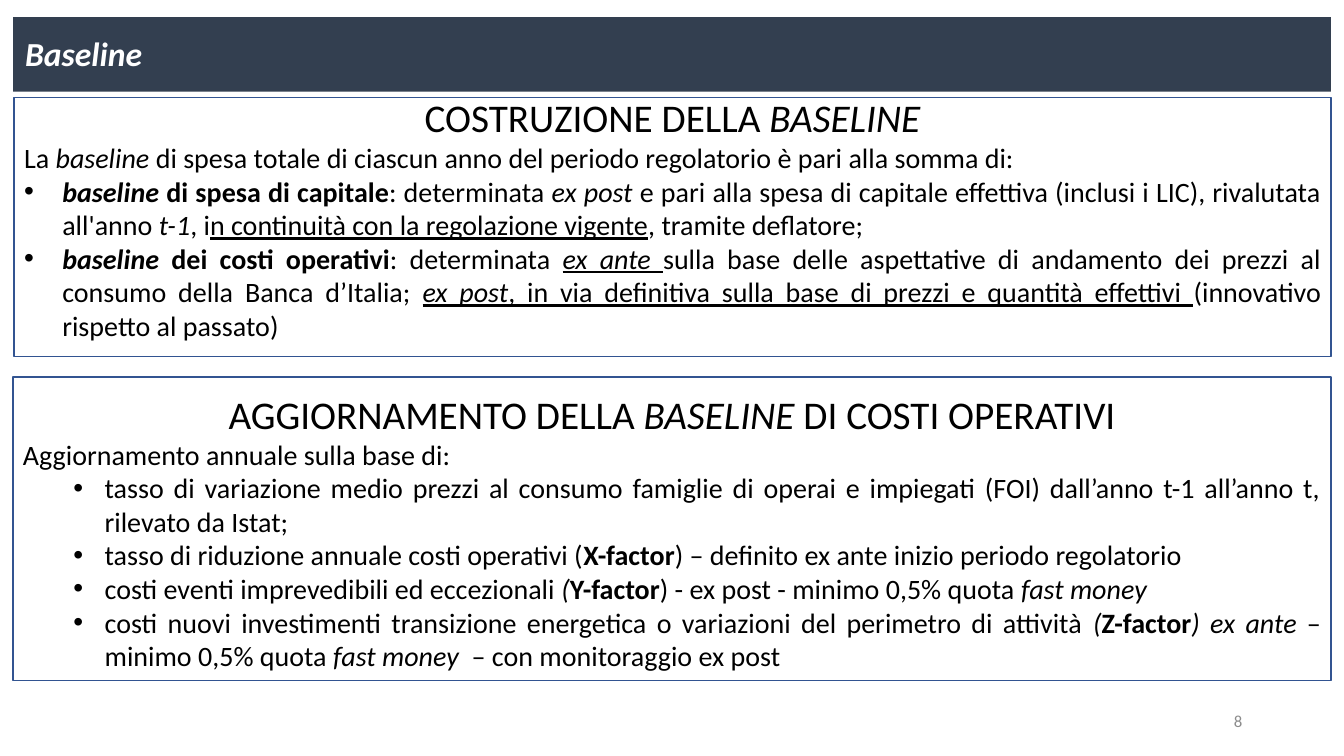
"""Build the slide on how the spending baseline is set and updated."""
from lxml.etree import SubElement
from pptx import Presentation
from pptx.dml.color import RGBColor
from pptx.enum.shapes import MSO_SHAPE
from pptx.enum.text import MSO_ANCHOR, PP_ALIGN
from pptx.oxml.ns import qn
from pptx.util import Inches, Pt


def color(code):
    return RGBColor.from_string(code)


def run(text, **form):
    return text, form


def indent(para, left, hang, bullet=True):
    props = para._p.get_or_add_pPr()
    props.set("marL", str(Inches(left)))
    props.set("indent", str(-Inches(hang)))
    if bullet:
        SubElement(props, qn("a:buFont")).set("typeface", "Arial")
        SubElement(props, qn("a:buChar")).set("char", "•")


class Deck:
    font = "Calibri"
    navy, blue, gray = "333F50", "325491", "8C8C8C"
    black, white = "000000", "FFFFFF"
    head, body = 28, 20

    def __init__(self):
        self.show = Presentation()
        self.show.slide_width = Inches(13.33)
        self.show.slide_height = Inches(7.5)
        self.slide = self.show.slides.add_slide(self.show.slide_layouts[6])

    def panel(self, left, top, width, height, fill=None, line=None):
        shape = self.slide.shapes.add_shape(
            MSO_SHAPE.RECTANGLE, Inches(left), Inches(top), Inches(width), Inches(height))
        shape.shadow.inherit = False
        if fill:
            shape.fill.solid()
            shape.fill.fore_color.rgb = color(fill)
        else:
            shape.fill.background()
        if line:
            shape.line.color.rgb = color(line)
            shape.line.width = Pt(1)
        else:
            shape.line.fill.background()
        return shape

    def put(self, para, parts, size, tint=black, align=PP_ALIGN.LEFT):
        para.alignment = align
        for text, form in parts:
            piece = para.add_run()
            piece.text = text
            font = piece.font
            font.name, font.size = self.font, Pt(size)
            font.color.rgb = color(tint)
            for key, value in form.items():
                setattr(font, key, value)

    def title(self, text):
        frame = self.panel(0.13, 0.17, 13.07, 0.74, fill=self.navy).text_frame
        frame.word_wrap = True
        frame.vertical_anchor = MSO_ANCHOR.TOP
        frame.margin_left, frame.margin_top = Inches(0.12), Inches(0.16)
        frame.margin_bottom = 0
        para = frame.paragraphs[0]
        indent(para, 0.29, 0.29, bullet=False)
        self.put(para, [run(text, bold=True, italic=True)], 24, self.white)

    def block(self, place, pads, head, intro, items, left, hang):
        frame = self.panel(*place, line=self.blue).text_frame
        frame.word_wrap = True
        frame.vertical_anchor = MSO_ANCHOR.MIDDLE
        frame.margin_top, frame.margin_bottom = map(Inches, pads)
        self.put(frame.paragraphs[0], head, self.head, align=PP_ALIGN.CENTER)
        self.put(frame.add_paragraph(), intro, self.body)
        for parts in items:
            para = frame.add_paragraph()
            indent(para, left, hang)
            self.put(para, parts, self.body, align=PP_ALIGN.JUSTIFY)

    def number(self, text):
        box = self.slide.shapes.add_textbox(Inches(9.42), Inches(6.95), Inches(3), Inches(0.4))
        frame = box.text_frame
        frame.word_wrap = True
        frame.vertical_anchor = MSO_ANCHOR.MIDDLE
        self.put(frame.paragraphs[0], [run(text)], 12, self.gray, PP_ALIGN.RIGHT)


def main():
    deck = Deck()
    deck.number("8")
    deck.title("Baseline")
    deck.block(
        (0.14, 0.97, 13.06, 2.57), (0, 0.19),
        [run("COSTRUZIONE DELLA "), run("BASELINE", italic=True)],
        [run("La "), run("baseline", italic=True),
         run(" di spesa totale di ciascun anno del periodo regolatorio è pari alla somma di:")],
        [[run("baseline", bold=True, italic=True),
          run(" di spesa di capitale", bold=True),
          run(": determinata "), run("ex post ", italic=True),
          run("e pari alla spesa di capitale effettiva (inclusi i LIC), rivalutata all'anno "),
          run("t-1", italic=True), run(", i"),
          run("n continuità con la regolazione vigente", underline=True),
          run(", tramite deflatore;")],
         [run("baseline", bold=True, italic=True),
          run(" dei costi operativi", bold=True),
          run(": determinata "), run("ex ante ", italic=True, underline=True),
          run("sulla base delle aspettative di andamento dei prezzi al consumo "
              "della Banca d’Italia; "),
          run("ex post", italic=True, underline=True),
          run(", in via definitiva sulla base di prezzi e quantità effettivi ", underline=True),
          run("(innovativo rispetto al passato)")]],
        0.38, 0.38)
    deck.block(
        (0.13, 3.74, 13.07, 3.01), (0.05, 0),
        [run("AGGIORNAMENTO DELLA "), run("BASELINE", italic=True),
         run(" DI COSTI OPERATIVI")],
        [run("Aggiornamento annuale sulla base di:")],
        [[run("tasso di variazione medio prezzi al consumo famiglie di operai e impiegati "
              "(FOI) dall’anno t-1 all’anno t, rilevato da Istat;")],
         [run("tasso di riduzione annuale costi operativi ("), run("X-factor", bold=True),
          run(") – definito ex ante inizio periodo regolatorio")],
         [run("costi eventi imprevedibili ed eccezionali "), run("(", italic=True),
          run("Y-factor", bold=True), run(") - ex post - minimo 0,5% quota "),
          run("fast money", italic=True)],
         [run("costi nuovi investimenti transizione energetica o variazioni del perimetro "
              "di attività "),
          run("(", italic=True), run("Z-factor", bold=True), run(") ex ante", italic=True),
          run(" – minimo 0,5% quota "), run("fast money ", italic=True),
          run(" – con monitoraggio ex post")]],
        0.81, 0.31)
    deck.show.save("out.pptx")


if __name__ == "__main__":
    main()
